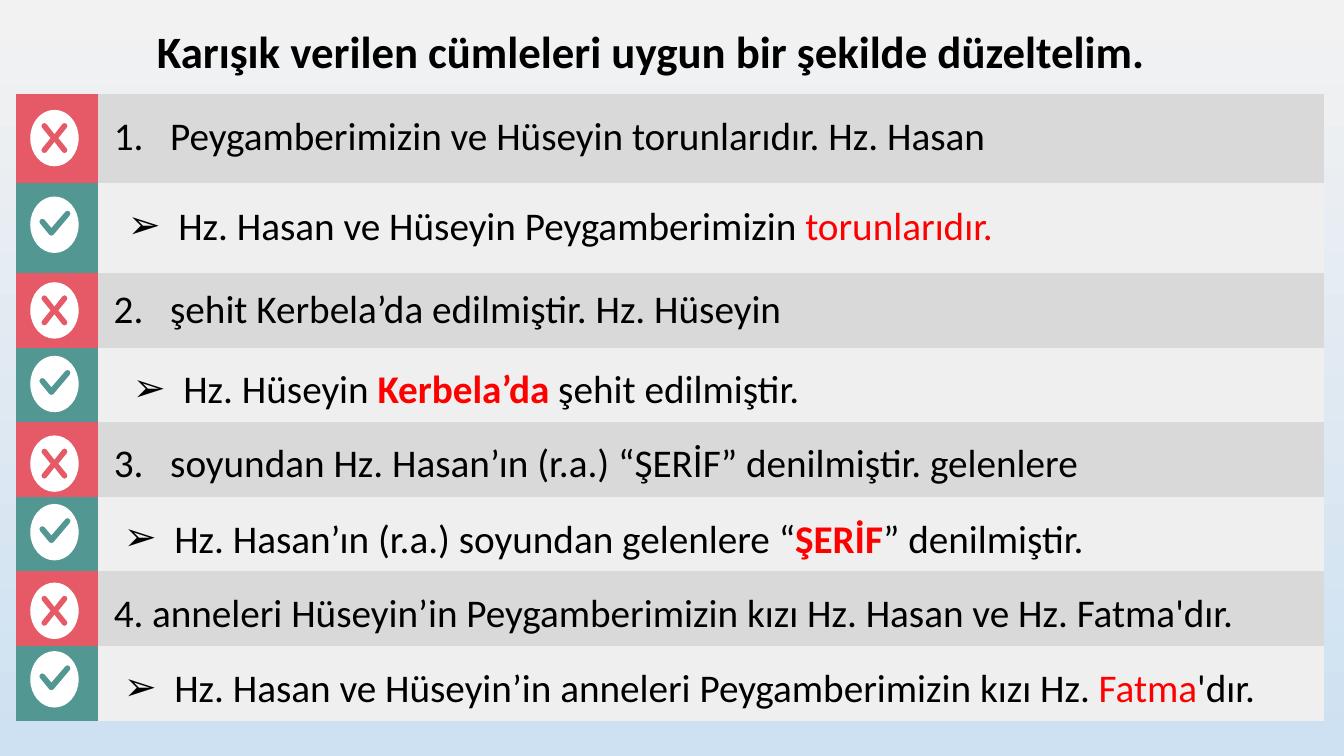
"""Builds a slide of jumbled sentences, each followed by its corrected form."""
import math

import pptx
import pptx.dml.color
import pptx.enum.text
import pptx.oxml
import pptx.oxml.ns
import pptx.util

TITLE = "Karışık verilen cümleleri uygun bir şekilde düzeltelim. "
FORMATS = {
    "plain": {"color": "000000", "bold": False},
    "red": {"color": "FF0000", "bold": False},
    "strong": {"color": "FF0000", "bold": True},
}
SENTENCES = [
    {"left": 1.03, "drop": 0.13, "width": 9.12, "icon": 0.16, "indent": 0.56,
     "runs": [("Peygamberimizin ve Hüseyin torunlarıdır. Hz. Hasan", "plain")]},
    {"left": 1.17, "drop": 0.13, "width": 8.9, "icon": 0.13, "indent": 0.5,
     "runs": [("Hz. Hasan ve Hüseyin Peygamberimizin ", "plain"), ("torunlarıdır.", "red")]},
    {"left": 1.03, "drop": 0.06, "width": 10.36, "icon": 0.09, "indent": 0.56,
     "runs": [("şehit Kerbela’da edilmiştir. Hz. Hüseyin", "plain")]},
    {"left": 1.22, "drop": 0.12, "width": 6.85, "icon": 0.08, "indent": 0.5,
     "runs": [("Hz. Hüseyin ", "plain"), ("Kerbela’da", "strong"), (" şehit edilmiştir.", "plain")]},
    {"left": 1.03, "drop": 0.11, "width": 11.49, "icon": 0.13, "indent": 0.56,
     "runs": [("soyundan Hz. Hasan’ın (r.a.) “ŞERİF” denilmiştir. gelenlere", "plain")]},
    {"left": 1.13, "drop": 0.12, "width": 9.79, "icon": 0.07, "indent": 0.5,
     "runs": [("Hz. Hasan’ın (r.a.) soyundan gelenlere “", "plain"), ("ŞERİF", "strong"),
              ("” denilmiştir.", "plain")]},
    {"left": 1.03, "drop": 0.12, "width": 12.02, "icon": 0.11, "indent": 0.38,
     "runs": [("anneleri Hüseyin’in Peygamberimizin kızı Hz. Hasan ve Hz. Fatma'dır.", "plain")]},
    {"left": 1.13, "drop": 0.12, "width": 12.02, "icon": 0.05, "indent": 0.5,
     "runs": [("Hz. Hasan ve Hüseyin’in anneleri Peygamberimizin kızı Hz. ", "plain"),
              ("Fatma", "red"), ("'dır.", "plain")]},
]
ROW_FILLS = [("E55A66", "D9D9D9"), ("539792", "EFEFEF")]
COLUMNS = [0.81, 12.16]
ROWS = [0.89] * 2 + [0.74] * 6
TABLE_LEFT, TABLE_TOP = 0.16, 0.93
ICON_CENTER, ICON_RADII = 0.54, (0.24, 0.28)
STROKE = (0.03, 0.03)
CROSS = [(0.1, 0.12, -45, 135), (0, 0.04, 0, 0), (-0.1, 0.12, 45, 225), (-0.04, 0, 0, 0),
         (-0.1, -0.12, 135, 315), (0, -0.04, 0, 0), (0.1, -0.12, 225, 405), (0.04, 0, 0, 0)]
CHECK = [(-0.12, -0.03, 135, 315), (-0.03, 0.03, 0, 0),
         (0.13, -0.11, -135, 45), (-0.03, 0.08, 45, 135)]
NO_GRID_STYLE = "{2D5ABB26-0587-4C30-8999-92F81FD0307C}"
inches = pptx.util.Inches


def rgb(value):
    return pptx.dml.color.RGBColor.from_string(value)


def add_run(para, text, color, **formats):
    span = para.add_run()
    span.text = text
    span.font.color.rgb = rgb(color)
    for name, value in {"name": "Calibri", **formats}.items():
        setattr(span.font, name, value)


def paint_background(page):
    fill = page.background.fill
    fill.gradient()
    fill.gradient_angle = 270
    for stop, color in zip(fill.gradient_stops, ("F2F2F2", "CEE1F2")):
        stop.color.rgb = rgb(color)


def add_title(page):
    box = page.shapes.title
    place = {"left": 1.27, "top": 0.19, "width": 10.48, "height": 0.62}
    for name, value in place.items():
        setattr(box, name, inches(value))
    frame = box.text_frame
    frame.auto_size = pptx.enum.text.MSO_AUTO_SIZE.NONE
    frame.vertical_anchor = pptx.enum.text.MSO_ANCHOR.MIDDLE
    for side in ("left", "top", "right", "bottom"):
        setattr(frame, "margin_" + side, inches(0.1))
    para = frame.paragraphs[0]
    para.alignment = pptx.enum.text.PP_ALIGN.CENTER
    add_run(para, TITLE, "000000", size=pptx.util.Pt(32), bold=True)


def add_stripes(page):
    frame = page.shapes.add_table(len(ROWS), len(COLUMNS), inches(TABLE_LEFT), inches(TABLE_TOP),
                                  inches(sum(COLUMNS)), inches(sum(ROWS)))
    table = frame.table
    table.first_row = table.horz_banding = False
    table._tbl.tblPr.find(pptx.oxml.ns.qn("a:tableStyleId")).text = NO_GRID_STYLE
    for column, width in zip(table.columns, COLUMNS):
        column.width = inches(width)
    for index, height in enumerate(ROWS):
        table.rows[index].height = inches(height)
        for cell, color in zip(table.rows[index].cells, ROW_FILLS[index % 2]):
            cell.fill.solid()
            cell.fill.fore_color.rgb = rgb(color)


def arc(x, y, radii, start, end):
    """Return the first point, then three Bezier points for each quarter turn."""
    turn = math.copysign(math.pi / 2, end - start)
    pull = 4 / 3 * math.tan(turn / 4)
    steps = []
    for quarter in range(abs(end - start) // 90):
        first = math.radians(start) + quarter * turn
        last = first + turn
        units = [(math.cos(first) - pull * math.sin(first), math.sin(first) + pull * math.cos(first)),
                 (math.cos(last) + pull * math.sin(last), math.sin(last) - pull * math.cos(last)),
                 (math.cos(last), math.sin(last))]
        steps.append([(x + radii[0] * across, y + radii[1] * down) for across, down in units])
    begin = math.radians(start)
    return [[(x + radii[0] * math.cos(begin), y + radii[1] * math.sin(begin))]] + steps


def add_icon(page, center_y, mark):
    outline = []
    for x, y, start, end in mark:
        outline += arc(x, y, STROKE, start, end) if start != end else [[(x, y)]]
    contours = [arc(0, 0, ICON_RADII, 360, 0), outline]
    points = [[((ICON_CENTER + x) * 1000, (center_y + y) * 1000) for step in steps for x, y in step]
              for steps in contours]
    builder = page.shapes.build_freeform(*points[0][0], scale=inches(1) / 1000)
    builder.add_line_segments(points[0][1:], close=True)
    builder.move_to(*points[1][0])
    builder.add_line_segments(points[1][1:], close=True)
    icon = builder.convert_to_shape()
    round_lines(icon, [step for steps in contours for step in steps[1:]])
    icon.shadow.inherit = False
    icon.fill.solid()
    icon.fill.fore_color.rgb = rgb("FFFFFF")
    icon.line.fill.background()


def round_lines(icon, steps):
    """Merge the three lines of each curved step into one Bezier segment."""
    lines = iter(list(icon._element.iter(pptx.oxml.ns.qn("a:lnTo"))))
    for step in steps:
        group = [next(lines) for point in step]
        if len(group) == 3:
            curve = pptx.oxml.parse_xml(f"<a:cubicBezTo {pptx.oxml.ns.nsdecls('a')}/>")
            group[0].addprevious(curve)
            for line in group:
                curve.append(line[0])
                line.getparent().remove(line)


def add_sentence(page, sentence, top, bullet):
    box = page.shapes.add_textbox(inches(sentence["left"]), inches(top + sentence["drop"]),
                                  inches(sentence["width"]), inches(0.57))
    box.text_frame.word_wrap = True
    para = box.text_frame.paragraphs[0]
    properties = para._p.get_or_add_pPr()
    indent = inches(sentence["indent"])
    for name, value in {"marL": indent, "indent": -indent}.items():
        properties.set(name, str(value))
    for tag in ('buFont typeface="Calibri"', bullet):
        properties.append(pptx.oxml.parse_xml(f"<a:{tag} {pptx.oxml.ns.nsdecls('a')}/>"))
    for text, style in sentence["runs"]:
        add_run(para, text, size=pptx.util.Pt(28), **FORMATS[style])


def main():
    deck = pptx.Presentation()
    deck.slide_width, deck.slide_height = inches(13.33), inches(7.5)
    page = deck.slides.add_slide(deck.slide_layouts[5])
    paint_background(page)
    add_title(page)
    add_stripes(page)
    for index, sentence in enumerate(SENTENCES):
        top = TABLE_TOP + sum(ROWS[:index])
        corrected = index % 2 == 1
        number = f'buAutoNum type="arabicPeriod" startAt="{index // 2 + 1}"'
        add_icon(page, top + sentence["icon"] + ICON_RADII[1], CHECK if corrected else CROSS)
        add_sentence(page, sentence, top, 'buChar char="➢"' if corrected else number)
    deck.save("out.pptx")


if __name__ == "__main__":
    main()
